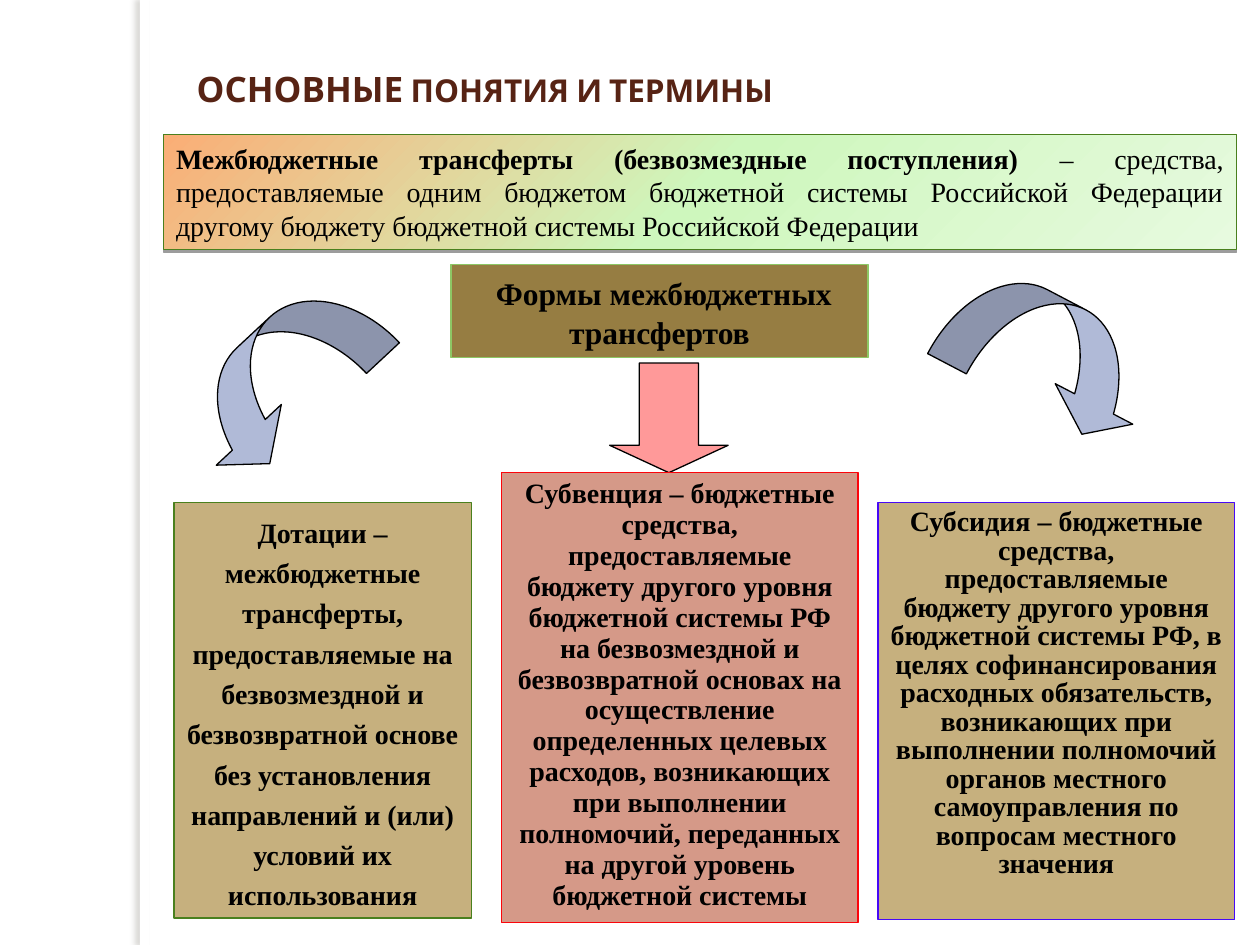
"""Builds a slide on the forms of interbudgetary transfers."""
from pptx import Presentation
from pptx.dml.color import RGBColor
from pptx.enum.shapes import MSO_SHAPE
from pptx.enum.text import MSO_ANCHOR, MSO_AUTO_SIZE, PP_ALIGN
from pptx.oxml import parse_xml
from pptx.oxml.ns import nsdecls, qn
from pptx.util import Cm, Pt

COLORS = {
    "white": "FFFFFF", "black": "000000", "title": "572314", "panel_shadow": "736F63",
    "peach": "FAAE76", "lime": "CEF7BD", "mint": "E7FADF", "green": "4A801E",
    "olive": "967D42", "light_green": "8DC765", "sand": "C6B07E", "rose": "D59988",
    "red": "FB050B", "violet": "4709F7", "blue": "B0BAD7", "pink": "FF9999",
}


class SlideBuilder:
    def __init__(self, slide, font="Times New Roman", title_font="Cabin"):
        self.slide = slide
        self.font = font
        self.title_font = title_font

    def color(self, name):
        return RGBColor.from_string(COLORS[name])

    def add_runs(self, paragraph, runs, font, color):
        for text, size, bold in runs:
            run = paragraph.add_run()
            run.text = text
            run.font.name = font
            run.font.size = Pt(size)
            run.font.bold = bold
            run.font.color.rgb = self.color(color)

    def title(self, place, runs):
        heading = self.slide.shapes.title
        heading.left, heading.top, heading.width, heading.height = map(Cm, place)
        frame = heading.text_frame
        frame.auto_size = MSO_AUTO_SIZE.NONE
        frame.vertical_anchor = MSO_ANCHOR.BOTTOM
        frame.paragraphs[0].alignment = PP_ALIGN.LEFT
        self.add_runs(frame.paragraphs[0], runs, self.title_font, "title")

    def shape(self, kind, place, fill, line=None, width=0.75, rotation=0, adjustments=()):
        shape = self.slide.shapes.add_shape(kind, *map(Cm, place))
        shape.shadow.inherit = False
        shape.rotation = rotation
        for index, value in enumerate(adjustments):
            shape.adjustments[index] = value
        shape.fill.solid()
        shape.fill.fore_color.rgb = self.color(fill)
        if line:
            shape.line.color.rgb = self.color(line)
            shape.line.width = Pt(width)
        else:
            shape.line.fill.background()
        return shape

    def box(self, place, runs, fill, line, width=0.75, align=PP_ALIGN.CENTER, spacing=1.0):
        box = self.shape(MSO_SHAPE.RECTANGLE, place, fill, line, width)
        frame = box.text_frame
        frame.word_wrap = True
        frame.vertical_anchor = MSO_ANCHOR.TOP
        paragraph = frame.paragraphs[0]
        paragraph.alignment = align
        paragraph.line_spacing = spacing
        self.add_runs(paragraph, runs, self.font, "black")
        return box

    def gradient(self, shape, stops, angle):
        marks = "".join(
            f'<a:gs pos="{position * 1000}"><a:srgbClr val="{COLORS[name]}"/></a:gs>'
            for position, name in stops)
        solid = shape._element.spPr.find(qn("a:solidFill"))
        solid.getparent().replace(solid, parse_xml(
            f'<a:gradFill {nsdecls("a")} rotWithShape="1"><a:gsLst>{marks}</a:gsLst>'
            f'<a:lin ang="{angle * 60000}" scaled="0"/></a:gradFill>'))

    def shadow(self, shape, color, alpha, blur, distance, angle):
        shape._element.spPr.find(qn("a:effectLst")).append(parse_xml(
            f'<a:outerShdw {nsdecls("a")} blurRad="{Pt(blur)}" dist="{Pt(distance)}" '
            f'dir="{angle * 60000}" algn="ctr" rotWithShape="0">'
            f'<a:srgbClr val="{COLORS[color]}"><a:alpha val="{alpha * 1000}"/>'
            f'</a:srgbClr></a:outerShdw>'))


def main():
    presentation = Presentation()
    presentation.slide_width, presentation.slide_height = Cm(25.4), Cm(19.05)
    builder = SlideBuilder(presentation.slides.add_slide(presentation.slide_layouts[5]))

    panel = builder.shape(MSO_SHAPE.RECTANGLE, (2.82, 0, 0.2, 19.05), "white")
    builder.shadow(panel, "panel_shadow", 25, 3, 3, 180)

    builder.title((3.71, 0.74, 20.83, 1.6),
                  [("ОСНОВНЫЕ", 20, True), (" ПОНЯТИЯ И ТЕРМИНЫ", 18, True)])

    definition = builder.box(
        (3.3, 2.72, 21.62, 2.31),
        [("Межбюджетные трансферты (безвозмездные поступления) ", 16, True),
         ("– средства, предоставляемые одним бюджетом бюджетной системы Российской "
          "Федерации другому бюджету бюджетной системы Российской Федерации", 16, False)],
        "lime", "green", 0.5, PP_ALIGN.JUSTIFY)
    builder.gradient(definition, [(0, "peach"), (50, "lime"), (100, "mint")], 45)
    builder.shadow(definition, "black", 38, 0, 1.6, 90)

    builder.box((9.09, 5.33, 8.41, 1.88),
                [(" ", 20, True), ("Формы межбюджетных трансфертов", 18, True)],
                "olive", "light_green")

    arrows = [
        (MSO_SHAPE.CURVED_RIGHT_ARROW, (4.6, 5.41, 2.16, 4.47), "blue", 47, (0.42, 0.83, 0.33)),
        (MSO_SHAPE.CURVED_LEFT_ARROW, (20.04, 4.95, 2.26, 4.39), "blue", 297.6, (0.39, 0.78, 0.29)),
        (MSO_SHAPE.DOWN_ARROW, (12.29, 7.32, 2.39, 2.21), "pink", 0, (0.5, 0.25)),
    ]
    for kind, place, fill, rotation, adjustments in arrows:
        builder.shape(kind, place, fill, "black", rotation=rotation, adjustments=adjustments)

    transfer_forms = [
        ((3.51, 10.13, 5.99, 8.38), "sand", "green", 1.2,
         "Дотации – межбюджетные трансферты, предоставляемые на безвозмездной и "
         "безвозвратной основе без установления направлений и (или) условий их "
         "использования"),
        ((10.11, 9.53, 7.19, 9.07), "rose", "red", 0.92,
         "Субвенция – бюджетные средства, предоставляемые бюджету другого уровня "
         "бюджетной системы РФ на безвозмездной и безвозвратной основах на "
         "осуществление определенных целевых расходов, возникающих при выполнении "
         "полномочий, переданных на другой уровень бюджетной системы"),
        ((17.7, 10.13, 7.19, 8.41), "sand", "violet", 0.85,
         "Субсидия – бюджетные средства, предоставляемые бюджету другого уровня "
         "бюджетной системы РФ, в целях софинансирования расходных обязательств, "
         "возникающих при выполнении полномочий органов местного самоуправления по "
         "вопросам местного значения"),
    ]
    for place, fill, line, spacing, meaning in transfer_forms:
        builder.box(place, [(meaning, 16, True)], fill, line, spacing=spacing)

    presentation.save("out.pptx")


if __name__ == "__main__":
    main()
